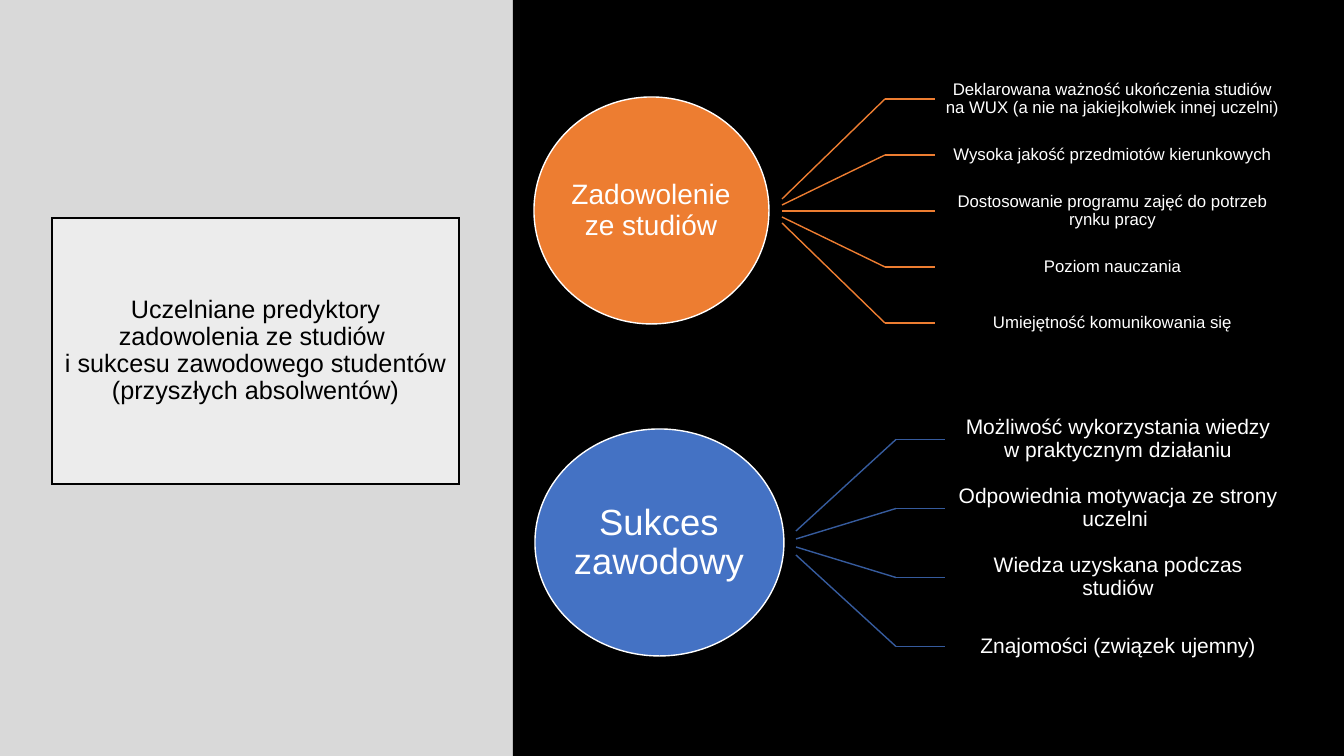
from lxml.etree import SubElement
from pptx import Presentation
from pptx.dml.color import RGBColor
from pptx.enum.shapes import MSO_CONNECTOR as LINK, MSO_SHAPE as SHAPE
from pptx.enum.text import MSO_ANCHOR as ANCHOR, MSO_AUTO_SIZE as FIT, PP_ALIGN as ALIGN
from pptx.oxml.ns import qn
from pptx.util import Emu, Pt

PX = 12192000 / 1344
rgb = RGBColor.from_string


def px(*lengths):
    return [Emu(round(length * PX)) for length in lengths]


def write(box, text, size, color, inset):
    frame = box.text_frame
    frame.text = text
    frame.word_wrap = True
    frame.auto_size = FIT.NONE
    frame.vertical_anchor = ANCHOR.MIDDLE
    frame.margin_left, frame.margin_top, frame.margin_right, frame.margin_bottom = px(*inset)
    para = frame.paragraphs[0]
    para.alignment = ALIGN.CENTER
    para.line_spacing = 0.9
    for span in para.runs:
        span.font.name = "Arial"
        span.font.size = Pt(size)
        span.font.color.rgb = rgb(color)


deck = Presentation()
deck.slide_width, deck.slide_height = px(1344, 756)
page = deck.slides.add_slide(deck.slide_layouts[5])
page.background.fill.solid()
page.background.fill.fore_color.rgb = rgb("000000")
title = page.shapes.title

panels = []
for left, width, color in [(0, 513, "D9D9D9"), (513, 831, "000000")]:
    panel = page.shapes.add_shape(SHAPE.RECTANGLE, *px(left, 0, width, 756))
    panel.shadow.inherit = False
    panel.fill.solid()
    panel.fill.fore_color.rgb = rgb(color)
    panel.line.fill.background()
    panels.append(panel)
title.element.addprevious(panels[0].element)

title.left, title.top, title.width, title.height = px(52, 218, 407, 266)
title.fill.solid()
title.fill.fore_color.rgb = rgb("FFFFFF")
tint = title.element.spPr.find(".//" + qn("a:srgbClr"))
SubElement(tint, qn("a:alpha"), val="50000")
title.line.color.rgb = rgb("000000")
title.line.width = Pt(2)
SubElement(title.element.spPr.find(qn("a:ln")), qn("a:miter"), lim="800000")
write(
    title,
    "Uczelniane predyktory zadowolenia ze studiów \vi sukcesu zawodowego studentów (przyszłych absolwentów)",
    18, "000000", (10, 5, 10, 5),
)
for line_break in title.element.iter(qn("a:br")):
    SubElement(line_break, qn("a:rPr"), sz="1800")

hubs = [
    {
        "name": "Zadowolenie ze studiów", "size": 20, "fill": "ED7D31", "line": "ED7D31",
        "circle": (534, 235), "label": (568, 166), "middle": 211,
        "fan": (782, 885, 935), "spread": 6, "step": 56,
        "item_width": 355, "item_size": 12, "inset": 9,
        "items": [
            "Deklarowana ważność ukończenia studiów na WUX (a nie na jakiejkolwiek innej uczelni)",
            "Wysoka jakość przedmiotów kierunkowych",
            "Dostosowanie programu zajęć do potrzeb rynku pracy",
            "Poziom nauczania",
            "Umiejętność komunikowania się",
        ],
    },
    {
        "name": "Sukces zawodowy", "size": 26, "fill": "4472C4", "line": "365B9D",
        "circle": (535, 249), "label": (571, 176), "middle": 543,
        "fan": (796, 896, 945), "spread": 8, "step": 69,
        "item_width": 346, "item_size": 15, "inset": 12,
        "items": [
            "Możliwość wykorzystania wiedzy w praktycznym działaniu",
            "Odpowiednia motywacja ze strony uczelni ",
            "Wiedza uzyskana podczas studiów",
            "Znajomości (związek ujemny)",
        ],
    },
]

for hub in hubs:
    middle, step = hub["middle"], hub["step"]
    left, width = hub["circle"]
    circle = page.shapes.add_shape(SHAPE.OVAL, *px(left, middle - 114, width, 227))
    circle.shadow.inherit = False
    circle.fill.solid()
    circle.fill.fore_color.rgb = rgb(hub["fill"])
    circle.line.color.rgb = rgb("FFFFFF")
    circle.line.width = Pt(1)

    left, width = hub["label"]
    label = page.shapes.add_textbox(*px(left, middle - 80, width, 160))
    write(label, hub["name"], hub["size"], "FFFFFF", (0, 0, 0, 0))

    start, bend, end = hub["fan"]
    for index, item in enumerate(hub["items"]):
        rank = index - (len(hub["items"]) - 1) / 2
        level = middle + rank * step
        origin = middle + rank * hub["spread"]
        for ends in [(start, origin, bend, level), (bend, level, end, level)]:
            branch = page.shapes.add_connector(LINK.STRAIGHT, *px(*ends))
            branch.line.color.rgb = rgb(hub["line"])
            branch.line.width = Pt(1)
            SubElement(branch.element.spPr, qn("a:effectLst"))
        box = page.shapes.add_textbox(*px(end, level - step / 2, hub["item_width"], step))
        write(box, item, hub["item_size"], "FFFFFF", [hub["inset"]] * 4)

deck.save("out.pptx")
